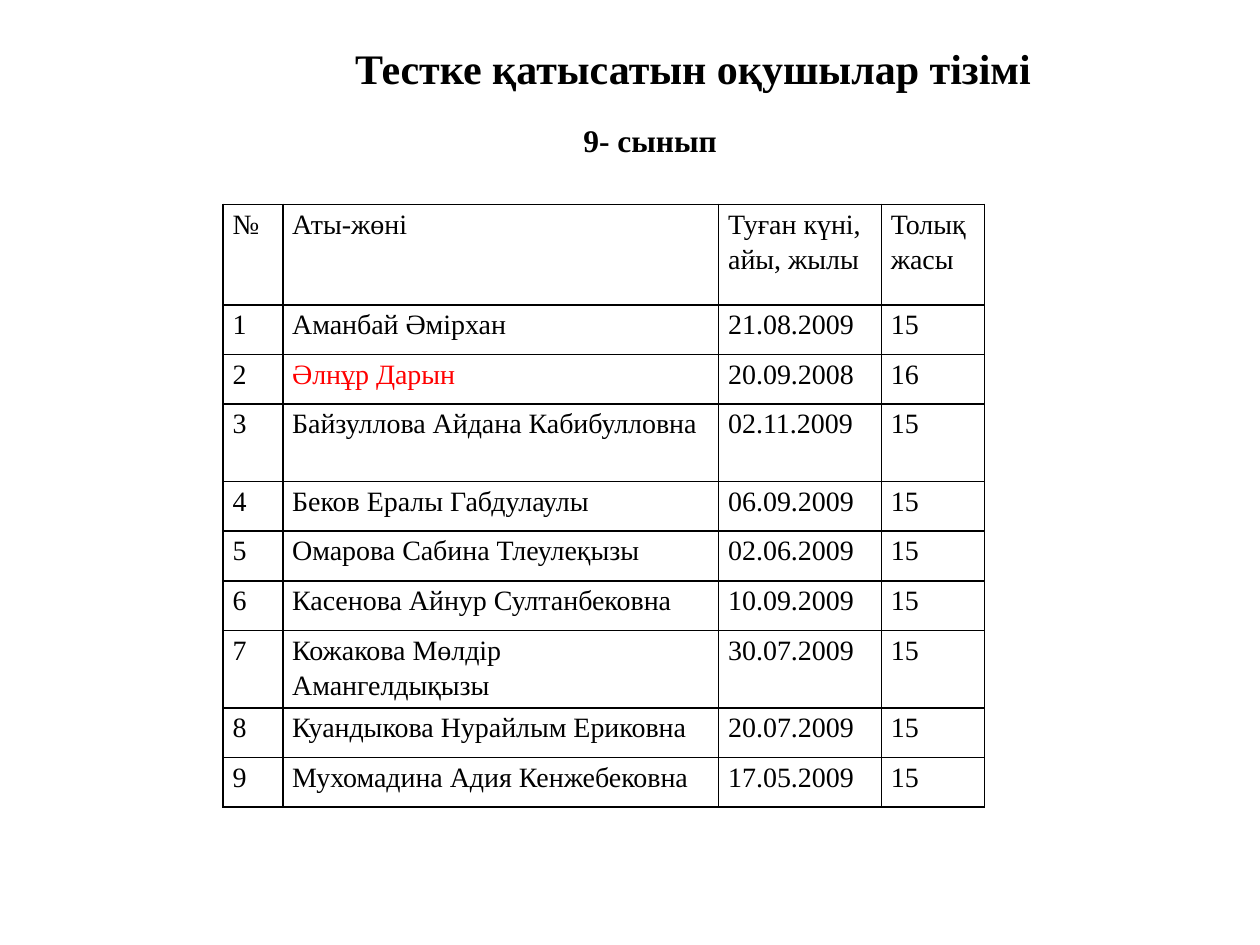
from dataclasses import dataclass

from lxml.etree import SubElement
from pptx import Presentation
from pptx.dml.color import RGBColor
from pptx.enum.text import MSO_AUTO_SIZE as AutoSize
from pptx.oxml.ns import qn
from pptx.util import Cm, Pt


@dataclass(frozen=True)
class Theme:
    font: str = "Times New Roman"
    ink: str = "000000"
    highlight: str = "FF0000"
    title_size: int = 24
    subtitle_size: int = 18
    table_size: int = 16
    border_width: int = 1
    line_spacing: float = 1.15


THEME = Theme()
HEADER = ("№", "Аты-жөні", "Туған күні, айы, жылы", "Толық жасы")
HIGHLIGHTED_STUDENT = "Әлнұр Дарын"
STUDENTS = (
    ("Аманбай Әмірхан", "21.08.2009", 15),
    (HIGHLIGHTED_STUDENT, "20.09.2008", 16),
    ("Байзуллова Айдана Кабибулловна", "02.11.2009", 15),
    ("Беков Ералы Габдулаулы", "06.09.2009", 15),
    ("Омарова Сабина Тлеулеқызы", "02.06.2009", 15),
    ("Касенова Айнур Султанбековна", "10.09.2009", 15),
    ("Кожакова Мөлдір\nАмангелдықызы", "30.07.2009", 15),
    ("Куандыкова Нурайлым Ериковна", "20.07.2009", 15),
    ("Мухомадина Адия Кенжебековна", "17.05.2009", 15),
)
COLUMN_WIDTHS = (1.2, 8.79, 3.28, 2.08)
HEADER_HEIGHT, ROW_HEIGHT, TALL_HEIGHT = 2.03, 1, 1.56
TALL_ROWS = (3, 7)


def style_paragraph(paragraph, size, color=THEME.ink, bold=False):
    font = paragraph.font
    font.name = THEME.font
    font.size = Pt(size)
    font.bold = bold
    font.color.rgb = RGBColor.from_string(color)


def add_heading(slide, text, box, size, wrap):
    shape = slide.shapes.add_textbox(*map(Cm, box))
    frame = shape.text_frame
    frame.word_wrap = wrap
    frame.auto_size = AutoSize.NONE if wrap else AutoSize.SHAPE_TO_FIT_TEXT
    frame.text = text
    style_paragraph(frame.paragraphs[0], size, bold=True)


def add_borders(cell):
    properties = cell._tc.get_or_add_tcPr()
    for position, side in enumerate(("lnL", "lnR", "lnT", "lnB")):
        line = SubElement(properties, qn(f"a:{side}"), w=str(Pt(THEME.border_width)))
        fill = SubElement(line, qn("a:solidFill"))
        SubElement(fill, qn("a:srgbClr"), val=THEME.ink)
        properties.insert(position, line)


def fill_cell(cell, value):
    cell.text = str(value)
    cell.margin_left = cell.margin_right = Cm(0.19)
    cell.margin_top = cell.margin_bottom = 0
    cell.fill.background()
    add_borders(cell)
    color = THEME.highlight if value == HIGHLIGHTED_STUDENT else THEME.ink
    for paragraph in cell.text_frame.paragraphs:
        paragraph.line_spacing = THEME.line_spacing
        style_paragraph(paragraph, THEME.table_size, color)


def add_student_table(slide, left, top):
    rows = [HEADER] + [(number, *student) for number, student in enumerate(STUDENTS, 1)]
    heights = [HEADER_HEIGHT] + [
        TALL_HEIGHT if number in TALL_ROWS else ROW_HEIGHT
        for number in range(1, len(rows))
    ]
    table = slide.shapes.add_table(
        len(rows), len(HEADER), Cm(left), Cm(top),
        Cm(sum(COLUMN_WIDTHS)), Cm(sum(heights)),
    ).table
    table.first_row = table.horz_banding = False
    for column, width in zip(table.columns, COLUMN_WIDTHS):
        column.width = Cm(width)
    for row, height, values in zip(table.rows, heights, rows):
        row.height = Cm(height)
        for cell, value in zip(row.cells, values):
            fill_cell(cell, value)


def main():
    """Build the slide listing the students who take the test."""
    presentation = Presentation()
    presentation.slide_width, presentation.slide_height = Cm(25.4), Cm(19.05)
    slide = presentation.slides.add_slide(presentation.slide_layouts[6])
    add_heading(slide, "Тестке қатысатын оқушылар тізімі",
                (6.91, 0.74, 14.27, 1.27), THEME.title_size, wrap=False)
    add_student_table(slide, 4.5, 4.12)
    add_heading(slide, "9- сынып",
                (11.51, 2.31, 7.01, 2.06), THEME.subtitle_size, wrap=True)
    presentation.save("out.pptx")


if __name__ == "__main__":
    main()
